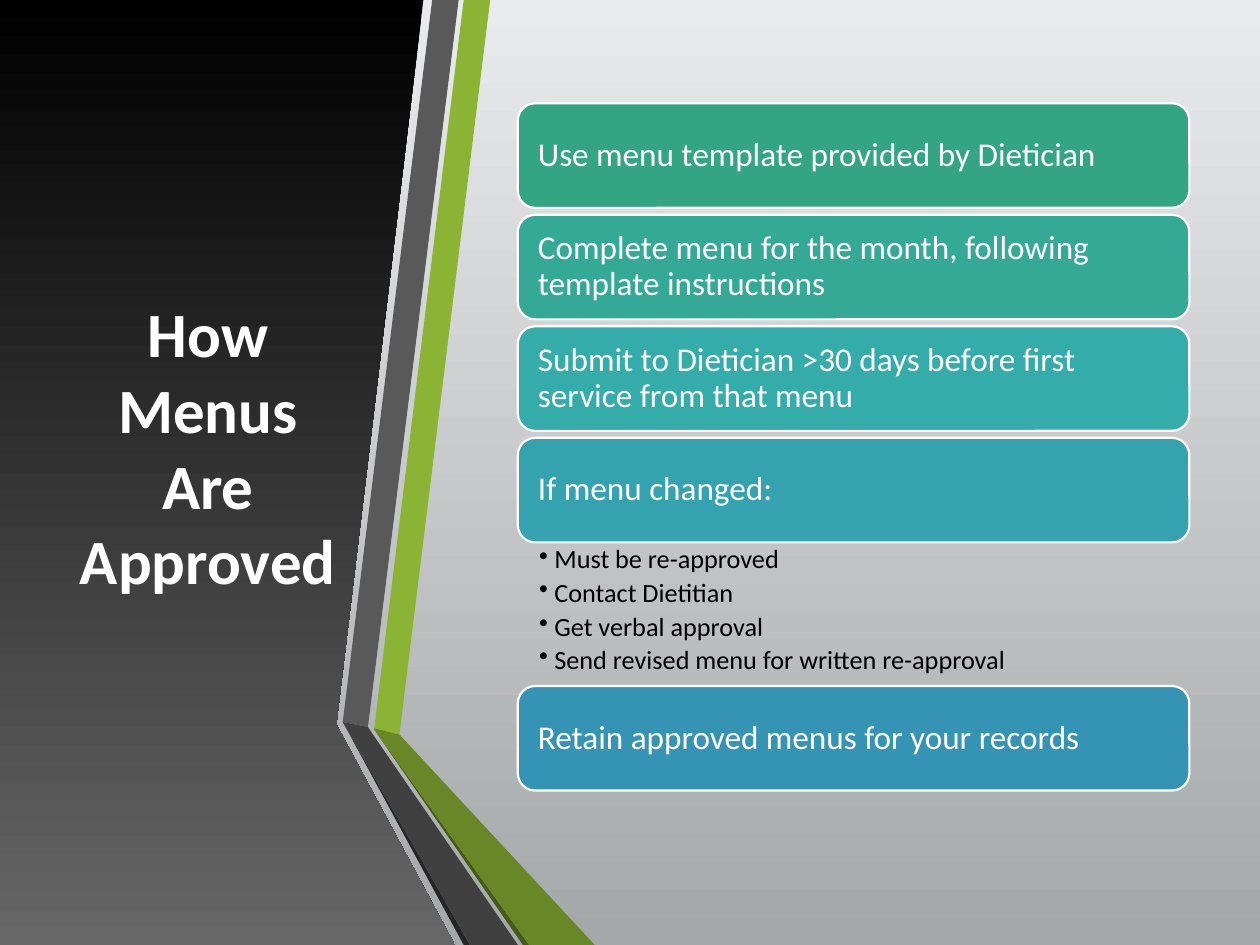
from lxml.etree import SubElement
from pptx import Presentation
from pptx.dml.color import RGBColor as Rgb
from pptx.enum.shapes import MSO_SHAPE as Shape
from pptx.enum.text import MSO_ANCHOR as Anchor, MSO_AUTO_SIZE as AutoSize, PP_ALIGN as Align
from pptx.oxml.ns import qn
from pptx.util import Inches, Pt

COLORS = {
    "white": "FFFFFF", "black": "000000", "smoke": "676767",
    "mist": "E9EAEB", "silver": "A5A8A9",
    "green": "8BB434", "moss": "688727", "olive": "465A1A",
    "gray": "595959", "coal": "404040", "soot": "262626",
    "step 1": "33A583", "step 2": "34A996", "step 3": "34ACAA",
    "step 4": "35A2B0", "step 5": "3594B4",
}
FONT = "Calibri"
UNIT = Inches(0.01)
WIDTH, HEIGHT = 1000, 750


def add_span(para, text, size, color, bold=False):
    span = para.add_run()
    span.text = text
    span.font.name = FONT
    span.font.size = Pt(size)
    span.font.bold = bold
    span.font.color.rgb = Rgb.from_string(COLORS[color])


def fade_down(fill, top, bottom):
    fill.gradient()
    fill.gradient_angle = 270
    for stop, color, position in zip(fill.gradient_stops, (top, bottom), (0, 1)):
        stop.color.rgb = Rgb.from_string(COLORS[color])
        stop.position = position


deck = Presentation()
deck.slide_width, deck.slide_height = WIDTH * UNIT, HEIGHT * UNIT
page = deck.slides.add_slide(deck.slide_layouts[5])
fade_down(page.background.fill, "mist", "silver")

pieces = [
    ("panel", [(0, 0), (336, 0), (267, 575), (361, 750), (0, 750)]),
    ("green", [(297, 578), (317, 583), (389, 0), (368, 0)]),
    ("gray", [(364, 0), (343, 0), (272, 573), (292, 577)]),
    ("soot", [(272, 573), (368, 750), (373, 750)]),
    ("olive", [(297, 579), (415, 750), (420, 750)]),
    ("moss", [(297, 579), (420, 750), (472, 750), (317, 583), (297, 578)]),
    ("coal", [(411, 750), (296, 583), (292, 577), (272, 573), (373, 750)]),
]
for color, points in pieces:
    builder = page.shapes.build_freeform(*points[0], scale=UNIT)
    builder.add_line_segments(points[1:], close=True)
    piece = builder.convert_to_shape()
    piece.shadow.inherit = False
    piece.line.fill.background()
    if color == "panel":
        fade_down(piece.fill, "black", "smoke")
    else:
        piece.fill.solid()
        piece.fill.fore_color.rgb = Rgb.from_string(COLORS[color])

title = page.shapes.title
title.element.getparent().append(title.element)
title.left, title.top, title.width, title.height = (n * UNIT for n in (44, 75, 242, 558))
frame = title.text_frame
frame.word_wrap = True
frame.auto_size = AutoSize.NONE
frame.vertical_anchor = Anchor.MIDDLE
para = frame.paragraphs[0]
para.alignment = Align.CENTER
add_span(para, "How Menus Are Approved", 36, "white", bold=True)

LEFT, TOP, STEP_WIDTH, STEP_HEIGHT, GAP = 411, 82, 533, 83, 5.5
LIST_HEIGHT = 114
steps = [
    ("Use menu template provided by Dietician", []),
    ("Complete menu for the month, following template instructions", []),
    ("Submit to Dietician >30 days before first service from that menu", []),
    ("If menu changed:", [
        "Must be re-approved",
        "Contact Dietitian",
        "Get verbal approval",
        "Send revised menu for written re-approval",
    ]),
    ("Retain approved menus for your records", []),
]
top = TOP
for number, (text, details) in enumerate(steps, 1):
    step = page.shapes.add_shape(Shape.ROUNDED_RECTANGLE, LEFT * UNIT, int(top * UNIT),
                                 STEP_WIDTH * UNIT, STEP_HEIGHT * UNIT)
    step.shadow.inherit = False
    step.fill.solid()
    step.fill.fore_color.rgb = Rgb.from_string(COLORS[f"step {number}"])
    step.line.color.rgb = Rgb.from_string(COLORS["white"])
    step.line.width = Pt(1.25)
    frame = step.text_frame
    frame.word_wrap = True
    frame.vertical_anchor = Anchor.MIDDLE
    frame.margin_left = frame.margin_right = 12 * UNIT
    frame.margin_top = frame.margin_bottom = 8 * UNIT
    para = frame.paragraphs[0]
    para.alignment = Align.LEFT
    para.line_spacing = 0.9
    add_span(para, text, 19, "white")
    top += STEP_HEIGHT

    if not details:
        top += GAP
        continue
    box = page.shapes.add_textbox(LEFT * UNIT, int(top * UNIT),
                                  STEP_WIDTH * UNIT, LIST_HEIGHT * UNIT)
    frame = box.text_frame
    frame.word_wrap = True
    frame.margin_left, frame.margin_right = 17 * UNIT, 15 * UNIT
    frame.margin_top = frame.margin_bottom = 3 * UNIT
    for index, detail in enumerate(details):
        para = frame.add_paragraph() if index else frame.paragraphs[0]
        para.line_spacing = 0.9
        para.space_after = Pt(3)
        props = para._p.get_or_add_pPr()
        props.set("marL", str(12 * UNIT))
        props.set("indent", str(-12 * UNIT))
        SubElement(props, qn("a:buChar"), char="•")
        add_span(para, detail, 15, "black")
    top += LIST_HEIGHT

deck.save("out.pptx")
